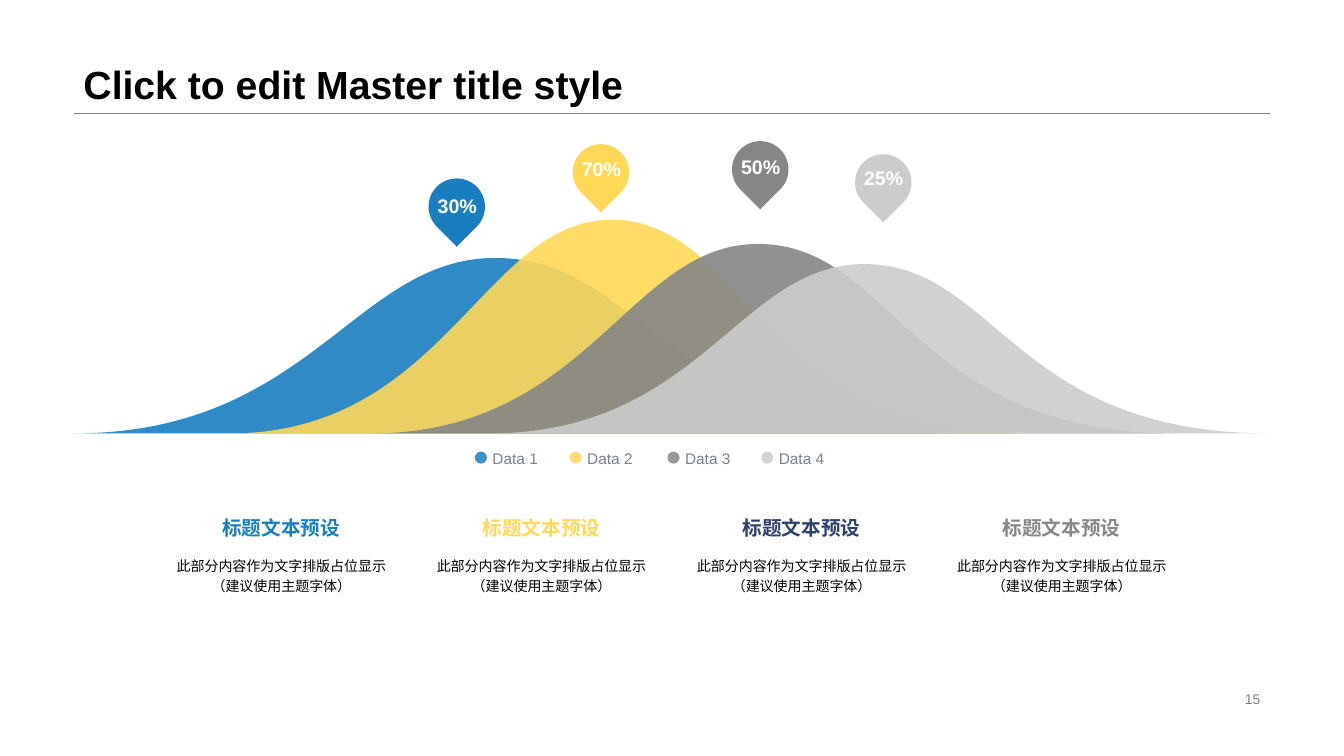
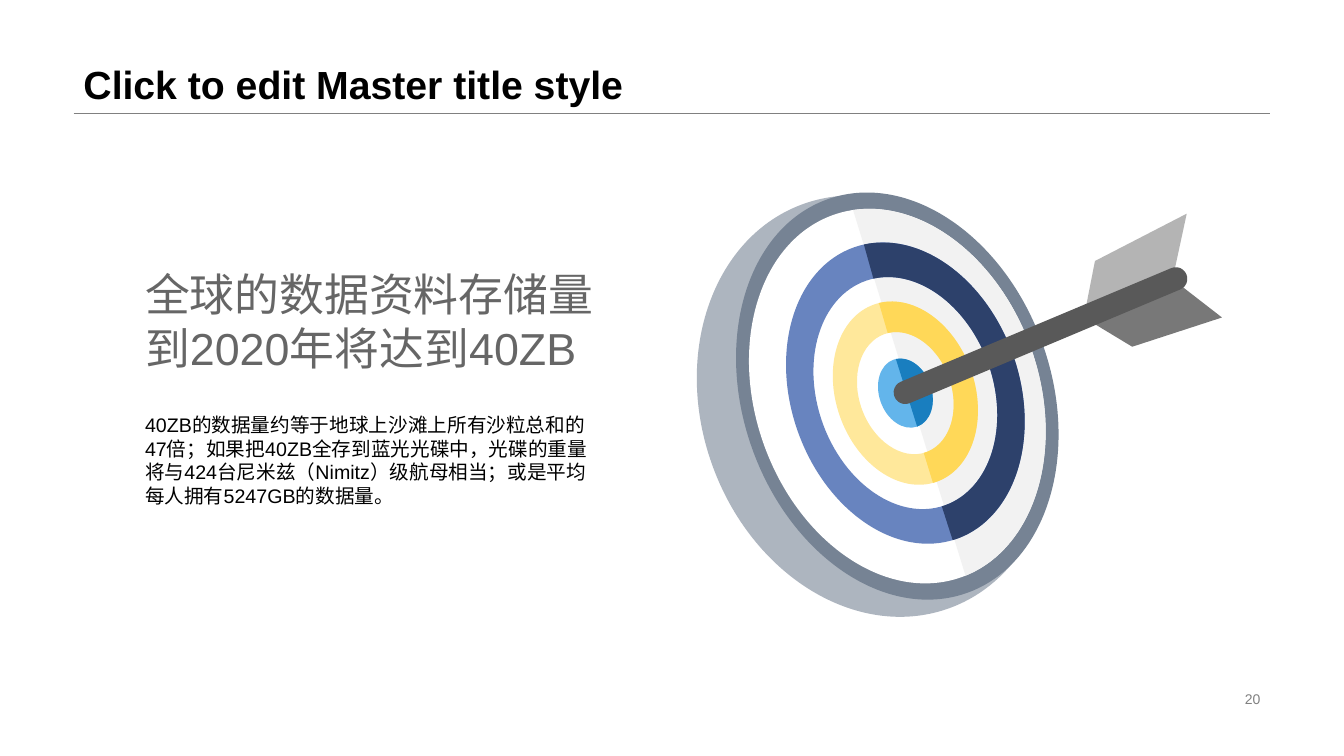
from math import cos, radians, sin, tan

from lxml.etree import SubElement
from pptx import Presentation
from pptx.dml.color import RGBColor
from pptx.enum.shapes import MSO_CONNECTOR, MSO_SHAPE
from pptx.enum.text import MSO_ANCHOR, PP_ALIGN
from pptx.oxml.ns import qn
from pptx.util import Inches, Pt

BLUE, GOLD, GRAY, SILVER = "197EBF", "FFD858", "868686", "CCCCCC"
NAVY, SLATE, RULE = "2D416B", "768394", "808080"
HUES = (BLUE, GOLD, GRAY, SILVER)
LEFT, WIDE = 0.73, 11.87
FLUSH = {"margin_left": 0, "margin_top": 0, "margin_right": 0, "margin_bottom": 0}
MID = {"vertical_anchor": MSO_ANCHOR.MIDDLE}
CENTER = {"alignment": PP_ALIGN.CENTER}


def paint(form, hue):
    form.rgb = RGBColor.from_string(hue)


def apply(item, style):
    for key, val in style.items():
        setattr(item, key, val)


def finish(shape, hue, alpha=100):
    shape.shadow.inherit = False
    shape.fill.solid()
    paint(shape.fill.fore_color, hue)
    shape.line.fill.background()
    if alpha < 100:
        tone = shape._element.spPr.find(".//" + qn("a:srgbClr"))
        SubElement(tone, qn("a:alpha")).set("val", str(alpha * 1000))
    return shape


def write(slide, box, text, size, hue, bold=False, frame=None, para=None):
    body = slide.shapes.add_textbox(*map(Inches, box)).text_frame
    apply(body, {"word_wrap": True, **(frame or {})})
    line = body.paragraphs[0]
    line.text = text
    apply(line, para or {})
    for run in line.runs:
        apply(run.font, {"name": "Arial", "size": Pt(size), "bold": bold})
        paint(run.font.color, hue)


def stamp(slide, kind, box, hue, alpha=100, turn=0):
    shape = finish(slide.shapes.add_shape(kind, *map(Inches, box)), hue, alpha)
    shape.rotation = turn
    return shape


def trace(slide, x, y, points, hue, alpha=100, curved=False):
    spots = [(Inches(x + px), Inches(y + py)) for px, py in points]
    pen = slide.shapes.build_freeform(*spots[0])
    pen.add_line_segments(spots[1:], close=True)
    shape = finish(pen.convert_to_shape(), hue, alpha)
    if curved:
        smooth(shape)


def smooth(shape):
    lines = list(shape._element.iter(qn("a:lnTo")))
    for i in range(0, len(lines), 3):
        first, *rest = lines[i:i + 3]
        first.tag = qn("a:cubicBezTo")
        for line in rest:
            first.append(line[0])
            line.getparent().remove(line)


def base(deck, number):
    slide = deck.slides.add_slide(deck.slide_layouts[6])
    ends = map(Inches, (LEFT, 1.12, LEFT + WIDE, 1.12))
    rule = slide.shapes.add_connector(MSO_CONNECTOR.STRAIGHT, *ends)
    paint(rule.line.color, RULE)
    rule.line.width = Pt(0.25)
    SubElement(rule._element.spPr, qn("a:effectLst"))
    write(slide, (LEFT, 0, WIDE, 1.12), "Click to edit Master title style", 28,
          "000000", True, {"vertical_anchor": MSO_ANCHOR.BOTTOM}, {"line_spacing": 0.9})
    write(slide, (9.42, 6.82, 3.18, 0.23), number, 10, RULE,
          frame=MID, para={"alignment": PP_ALIGN.RIGHT})
    return slide


def bell(slide, x, y, w, h, hue):
    bends = ((0, 1), (0.27, 1), (0.32, 0), (0.48, 0), (0.65, 0), (0.67, 1), (1, 1))
    trace(slide, x, y, [(w * px, h * py) for px, py in bends], hue, 90, True)


def hills(slide, x, y, h):
    rows = ((0, 8.71, 1.74), (1.55, 7.88, 2.12), (2.95, 7.99, 1.88), (4.12, 7.75, 1.68))
    for (dx, w, tall), hue in zip(rows, HUES):
        bell(slide, x + dx, y + h - tall, w, tall, hue)


def pins(slide, x, y):
    rows = ((0, 0.37, 0.15, "30%"), (1.43, 0.03, 0.12, "70%"),
            (3.01, 0, 0.13, "50%"), (4.23, 0.13, 0.11, "25%"))
    for (dx, dy, drop, text), hue in zip(rows, HUES):
        stamp(slide, MSO_SHAPE.TEAR, (x + dx, y + dy, 0.56, 0.56), hue, turn=135)
        write(slide, (x + dx + 0.09, y + dy + drop, 0.39, 0.24), text, 14, "FFFFFF",
              True, {**FLUSH, **MID, "word_wrap": False}, CENTER)


def legend(slide, x, y):
    for i, (dx, hue) in enumerate(zip((0, 0.94, 1.91, 2.84), HUES), 1):
        stamp(slide, MSO_SHAPE.OVAL, (x + dx, y + 0.03, 0.12, 0.12), hue, 85)
        write(slide, (x + dx + 0.16, y, 0.48, 0.19), f"Data {i}", 11, SLATE,
              frame={**FLUSH, **MID, "word_wrap": False}, para=CENTER)


def notes(slide, x, y, w, gap):
    frame = {**FLUSH, **MID}
    for i, hue in enumerate((BLUE, GOLD, NAVY, GRAY)):
        left = x + i * (w + gap)
        write(slide, (left, y, w, 0.31), "标题文本预设", 14, hue, True, frame, CENTER)
        write(slide, (left, y + 0.3, w, 0.63),
              "此部分内容作为文字排版占位显示\n（建议使用主题字体）", 10, "000000",
              frame=frame, para={**CENTER, "line_spacing": 1.2})


def arc(mid, scale, span, axes=((1.445, -0.505), (0.685, 1.955))):
    first, last = map(radians, span)
    step = (last - first) / 4
    pull = 4 / 3 * tan(step / 4)

    def spot(t, lean=0):
        c, s = cos(t) - lean * sin(t), sin(t) + lean * cos(t)
        return tuple(m + scale * (a * c + b * s) for m, a, b in zip(mid, *axes))

    points = [spot(first)]
    for i in range(4):
        t = first + i * step
        points += [spot(t, pull), spot(t + step, -pull), spot(t + step)]
    return points


def target(slide, x, y):
    back, rim, hub = (1.79, 2.13), (2, 2.03), (2.08, 2)
    full = (0, 360)
    side = arc(back, 1, full, ((1.63, -0.57), (0.71, 2.01)))
    trace(slide, x, y, side, "ADB5BF", curved=True)
    bands = (
        (rim, 1, 0, full, SLATE),
        (rim, 0.92, 0, full, "FFFFFF"),
        (rim, 0.92, 0, (-82, 88), "F2F2F2"),
        (hub, 0.74, 0.57, full, "6884BF"),
        (hub, 0.74, 0.57, (-85, 92), NAVY),
        (hub, 0.45, 0.3, full, "FFE89B"),
        (hub, 0.45, 0.3, (-86, 93), GOLD),
        (hub, 0.17, 0, full, "63B5EB"),
        (hub, 0.17, 0, (-85, 90), BLUE),
    )
    for mid, outer, inner, span, hue in bands:
        points = arc(mid, outer, span)
        if inner:
            hole = arc(mid, inner, span[::-1])
            points += [points[-1], hole[0], *hole]
        trace(slide, x, y, points, hue, curved=True)


def dart(slide, x, y):
    nock, tail = (3.85, 1.25), (4.73, 0.87)
    trace(slide, x, y, (nock, (3.96, 0.69), (4.87, 0.22), tail), "B4B4B4")
    trace(slide, x, y, (nock, (4.33, 1.54), (5.22, 1.25), tail), "787878")
    long, thick = 3.14, 0.23
    box = (x + 3.42 - long / 2, y + 1.43 - thick / 2, long, thick)
    shaft = stamp(slide, MSO_SHAPE.ROUNDED_RECTANGLE, box, "595959", turn=-22.8)
    shaft.adjustments[0] = 0.5


def story(slide, x, y):
    write(slide, (x, y, 4.9, 1.18), "全球的数据资料存储量\n到2020年将达到40ZB", 32, "666666")
    write(slide, (x, y + 1.45, 4.69, 1.04),
          "40ZB的数据量约等于地球上沙滩上所有沙粒总和的47倍；如果把40ZB全存到蓝光光碟中，"
          "光碟的重量将与424台尼米兹（Nimitz）级航母相当；或是平均每人拥有5247GB的数据量。",
          14, "000000")


def main():
    deck = Presentation()
    deck.slide_width, deck.slide_height = Inches(13.33), Inches(7.5)
    chart = base(deck, "15")
    hills(chart, LEFT, 2.18, 2.12)
    pins(chart, 4.25, 1.4)
    legend(chart, 4.71, 4.45)
    notes(chart, 1.58, 5.08, 2.42, 0.16)
    goal = base(deck, "20")
    target(goal, 6.9, 1.9)
    dart(goal, 6.9, 1.9)
    story(goal, 1.34, 2.6)
    deck.save("out.pptx")


if __name__ == "__main__":
    main()
